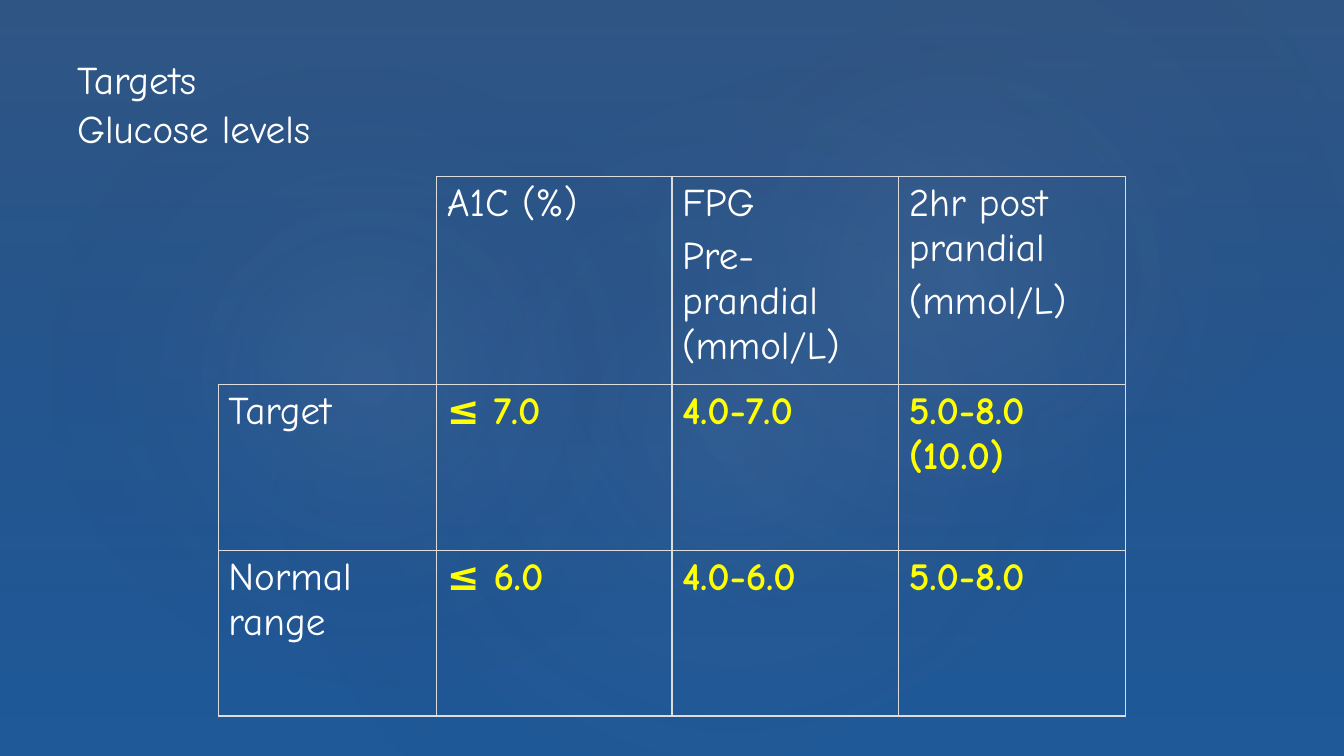
from lxml.etree import SubElement
from pptx import Presentation
from pptx.dml.color import RGBColor
from pptx.enum.shapes import MSO_SHAPE
from pptx.enum.text import MSO_ANCHOR
from pptx.oxml.ns import qn
from pptx.util import Pt

PX = 9525
COLORS = {
    "backdrop": "1F5FA0",
    "haze": "504652",
    "navy": "242852",
    "glow": "C4BCC6",
    "grid": "DDDDDD",
    "label": "FFFFFF",
    "value": "FFFF00",
}
LABEL = {"name": "Comic Neue", "size": Pt(28), "bold": False}
VALUE = LABEL | {"bold": True}
GLOWS = [
    ((192, 109, 1014, 599), 328.7, 7),
    ((59, 44, 582, 627), 294.3, 8),
    ((459, 12, 907, 499), 328.7, 8),
]
COLUMNS = [208, 224, 216, 216]
ROWS = [198, 158, 158]
LEVELS = [
    [[], ["A1C (%)"], ["FPG", "Pre-prandial (mmol/L)"], ["2hr post prandial", "(mmol/L)"]],
    [["Target"], ["≤ 7.0"], ["4.0-7.0"], ["5.0-8.0 (10.0)"]],
    [["Normal range"], ["≤ 6.0"], ["4.0-6.0"], ["5.0-8.0"]],
]


def emu(box):
    return [length * PX for length in box]


def rgb(name):
    return RGBColor.from_string(COLORS[name])


def style(font, formats, color):
    for key, value in formats.items():
        setattr(font, key, value)
    font.color.rgb = rgb(color)


def add_color(parent, name, opacity=100):
    color = SubElement(parent, qn("a:srgbClr"), val=COLORS[name])
    SubElement(color, qn("a:alpha"), val=str(opacity * 1000))


def add_haze(slide, kind, box, stops, rotation=0, radial=False):
    haze = slide.shapes.add_shape(kind, *emu(box))
    haze.rotation = rotation
    haze.shadow.inherit = False
    haze.line.fill.background()
    haze.fill.gradient()
    gradient = haze.fill._xPr.find(qn("a:gradFill"))
    for child in list(gradient):
        gradient.remove(child)
    stop_list = SubElement(gradient, qn("a:gsLst"))
    for position, color, opacity in stops:
        stop = SubElement(stop_list, qn("a:gs"), pos=str(position * 1000))
        add_color(stop, color, opacity)
    if radial:
        center = SubElement(gradient, qn("a:path"), path="circle")
        SubElement(center, qn("a:fillToRect"), {side: "50000" for side in "ltrb"})
    else:
        SubElement(gradient, qn("a:lin"), ang="5400000", scaled="0")


def add_backdrop(slide, box):
    slide.background.fill.solid()
    slide.background.fill.fore_color.rgb = rgb("backdrop")
    add_haze(slide, MSO_SHAPE.RECTANGLE, box, [(0, "haze", 36), (100, "navy", 10)])
    left, top = box[:2]
    for (x, y, width, height), rotation, opacity in GLOWS:
        stops = [(0, "glow", opacity), (58, "navy", 0)]
        glow_box = (left + x, top + y, width, height)
        add_haze(slide, MSO_SHAPE.OVAL, glow_box, stops, rotation, radial=True)


def add_title(slide, box):
    title = slide.shapes.add_textbox(*emu(box)).text_frame
    title.word_wrap = True
    title.vertical_anchor = MSO_ANCHOR.BOTTOM
    heading = title.paragraphs[0]
    heading.text = "Targets\vGlucose levels"
    heading.line_spacing = 1.04
    for run in heading.runs:
        style(run.font, LABEL, "label")


def add_borders(cell, visible):
    properties = cell._tc.get_or_add_tcPr()
    for side in "LRTB":
        border = SubElement(properties, qn(f"a:ln{side}"), w=str(Pt(1)))
        if side in visible:
            add_color(SubElement(border, qn("a:solidFill")), "grid")
        else:
            SubElement(border, qn("a:noFill"))
    cell.fill.background()


def fill_cell(cell, lines, formats, color):
    frame = cell.text_frame
    for index, line in enumerate(lines):
        paragraph = frame.add_paragraph() if index else frame.paragraphs[0]
        paragraph.space_before = Pt(5.6)
        run = paragraph.add_run()
        run.text = line
        style(run.font, formats, color)


def add_levels(slide, left, top):
    box = (left, top, sum(COLUMNS), sum(ROWS))
    levels = slide.shapes.add_table(len(ROWS), len(COLUMNS), *emu(box)).table
    levels.first_row = levels.horz_banding = False
    for column, width in zip(levels.columns, COLUMNS):
        column.width = width * PX
    for row, height in zip(levels.rows, ROWS):
        row.height = height * PX
    for r, row in enumerate(LEVELS):
        for c, lines in enumerate(row):
            cell = levels.cell(r, c)
            add_borders(cell, "LRTB" if lines else "RB")
            formats, color = (VALUE, "value") if r and c else (LABEL, "label")
            fill_cell(cell, lines, formats, color)


def main():
    deck = Presentation()
    deck.slide_width, deck.slide_height = emu((1280, 720))
    slide = deck.slides.add_slide(deck.slide_layouts[6])
    add_backdrop(slide, (0, 0, 1280, 720))
    add_title(slide, (64, 29, 1152, 120))
    add_levels(slide, 208, 168)
    deck.save("out.pptx")


if __name__ == "__main__":
    main()
